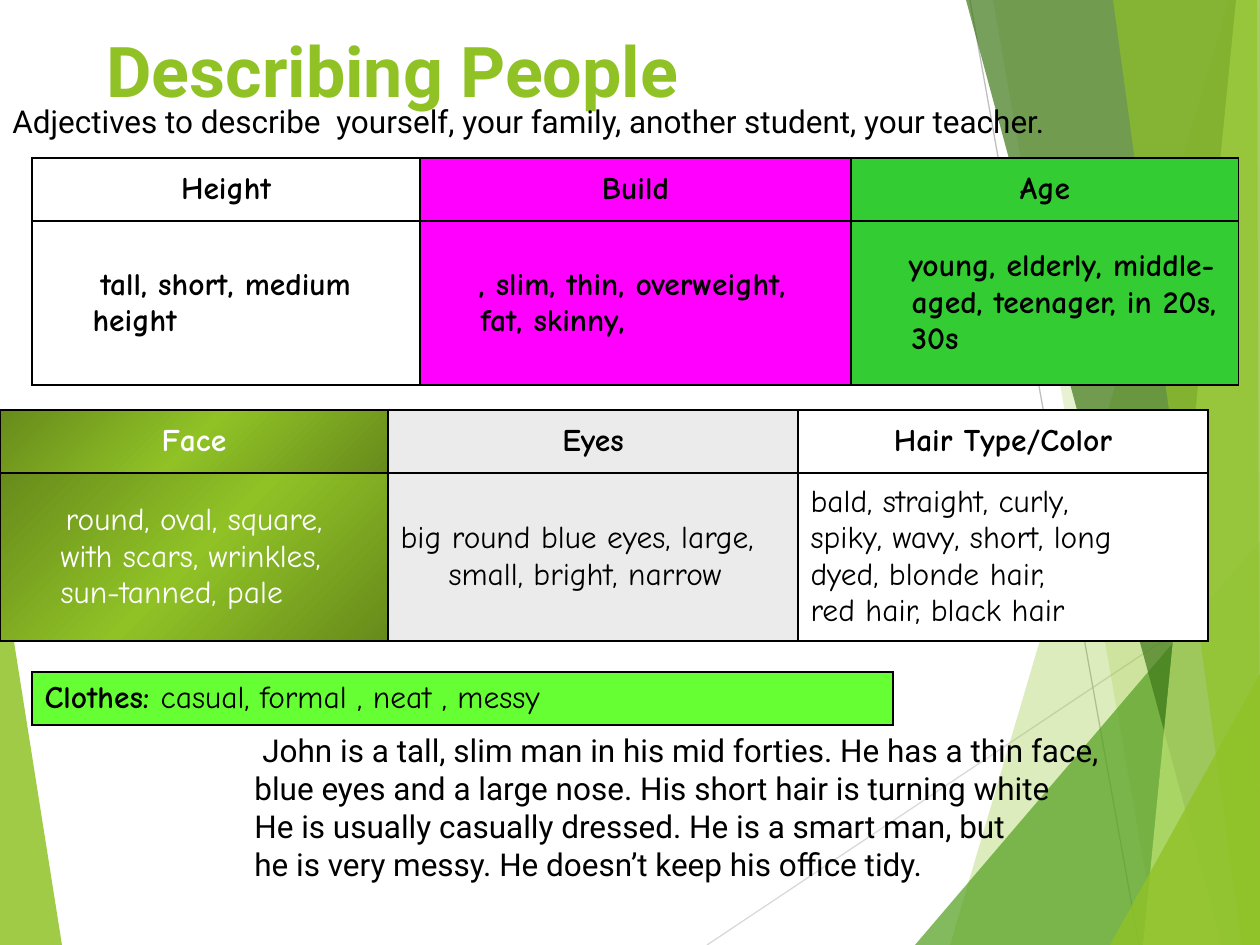
import pptx
import pptx.util
import pptx.dml.color
import pptx.enum.shapes
import pptx.enum.text
import pptx.oxml
import pptx.oxml.ns
import copy
import lxml.etree

SCALE = 914400 / 126
HAND, SANS = "Comic Neue", "Roboto"
NAMESPACE = pptx.oxml.ns.nsdecls("a")
CENTER = pptx.enum.text.PP_ALIGN.CENTER
MIDDLE = pptx.enum.text.MSO_ANCHOR.MIDDLE


def color(code):
    return pptx.dml.color.RGBColor.from_string(code)


def write(frame, text, font=SANS, size=18, ink="000000", bold=False, align=None, margin=0, indents=(0,)):
    for index, line in enumerate(text.split("\n")):
        paragraph = frame.paragraphs[0] if index == 0 else frame.add_paragraph()
        paragraph.alignment = align
        properties = paragraph._p.get_or_add_pPr()
        properties.set("marL", str(round(margin * SCALE)))
        properties.set("indent", str(round(indents[min(index, len(indents) - 1)] * SCALE)))
        run = paragraph.add_run()
        run.text = line
        run.font.name = font
        run.font.size = pptx.util.Pt(size)
        run.font.bold = bold
        run.font.color.rgb = color(ink)


presentation = pptx.Presentation()
presentation.slide_width = round(1260 * SCALE)
presentation.slide_height = round(945 * SCALE)
slide = presentation.slides.add_slide(presentation.slide_layouts[6])
shapes = slide.shapes

rays = [
    ("90C226", 85, [(0, 553), (62, 945), (0, 945)]),
    ("90C226", 30, [(1229, 0), (950, 945), (1260, 945), (1260, 0)]),
    ("90C226", 20, [(993, 0), (1158, 945), (1260, 945), (1260, 0)]),
    ("54A021", 72, [(915, 945), (1260, 541), (1260, 945)]),
    ("3F7819", 70, [(966, 0), (1222, 945), (1260, 945), (1260, 0)]),
    ("C0E474", 70, [(1236, 0), (1143, 945), (1260, 945), (1260, 0)]),
    ("90C226", 65, [(1113, 0), (1242, 945), (1260, 945), (1257, 0)]),
    ("90C226", 80, [(1110, 945), (1260, 674), (1260, 945)]),
]
threads = [("D9D9D9", (707, 945, 1260, 576)), ("BFBFBF", (970, 0, 1139, 945))]

for index, (fill, opacity, points) in enumerate(rays):
    builder = shapes.build_freeform(*points[0], scale=SCALE)
    builder.add_line_segments(points[1:], close=True)
    ray = builder.convert_to_shape()
    ray.shadow.inherit = False
    ray.line.fill.background()
    ray.fill.solid()
    ray.fill.fore_color.rgb = color(fill)
    tone = ray._element.spPr.find(".//" + pptx.oxml.ns.qn("a:srgbClr"))
    lxml.etree.SubElement(tone, pptx.oxml.ns.qn("a:alpha")).set("val", str(opacity * 1000))
    if index == 0:
        for stroke, ends in threads:
            thread = shapes.add_connector(
                pptx.enum.shapes.MSO_CONNECTOR.STRAIGHT, *[round(end * SCALE) for end in ends])
            thread.line.color.rgb = color(stroke)
            thread.line.width = pptx.util.Pt(0.75)
            lxml.etree.SubElement(thread._element.spPr, pptx.oxml.ns.qn("a:effectLst"))

story = (
    "John is a tall, slim man in his mid forties. He has a thin face,\n"
    "blue eyes and a large nose. His short hair is turning white\n"
    "He is usually casually dressed. He is a smart man, but\n"
    "he is very messy. He doesn’t keep his office tidy."
)
subtitle = "Adjectives to describe  yourself, your family, another student, your teacher."
texts = [
    ((94, 21, 946, 220), "Describing People", dict(size=40, ink="90C226", bold=True)),
    ((0, 76, 1075, 89), subtitle, {}),
    ((242, 725, 955, 164), story, dict(indents=(8, 0))),
]
for box, text, style in texts:
    textbox = shapes.add_textbox(*[round(length * SCALE) for length in box])
    textbox.text_frame.word_wrap = True
    if text == subtitle:
        textbox.text_frame.vertical_anchor = MIDDLE
    write(textbox.text_frame, text, **style)

WHITE, BLACK, GRADIENT = "FFFFFF", "000000", ("678B1B", "90C226", "678B1B")
heading = dict(bold=True, align=CENTER, margin=48, indents=(-48,))
body = dict(margin=48, indents=(-48,))
hair = "bald, straight, curly,\nspiky, wavy, short, long\ndyed, blonde hair,\nred hair, black hair"
tables = [
    (32, 158, (388, 431, 388), (63, 164), 0.75, (WHITE, "FF00FF", "33CC33"), [
        [("Height", heading), ("Build", heading), ("Age", heading)],
        [("tall, short, medium height", dict(bold=True, margin=48, indents=(8,))),
         (", slim, thin, overweight,  fat, skinny,", dict(bold=True, margin=48, indents=(-2,))),
         ("young, elderly, middle-aged, teenager, in 20s, 30s", dict(bold=True, margin=48, indents=(-3,)))],
    ]),
    (0, 410, (388, 410, 410), (63, 168), 0.75, (GRADIENT, "EBEBEB", WHITE), [
        [("Face", heading), ("Eyes", heading), ("Hair Type/Color", heading)],
        [("round, oval, square, with scars, wrinkles, sun-tanned, pale", dict(margin=48, indents=(5,))),
         ("big round blue eyes, large, small, bright, narrow", body),
         (hair, body)],
    ]),
    (32, 672, (861,), (53,), 1, ("66FF33",), [[("Clothes: ", dict(bold=True))]]),
]
for left, top, widths, heights, border, fills, rows in tables:
    box = (left, top, sum(widths), sum(heights))
    table = shapes.add_table(len(heights), len(widths), *[round(length * SCALE) for length in box]).table
    for column, width in zip(table.columns, widths):
        column.width = round(width * SCALE)
    for row, height in zip(table.rows, heights):
        row.height = round(height * SCALE)
    for row_index, entries in enumerate(rows):
        for column_index, ((text, style), fill) in enumerate(zip(entries, fills)):
            cell = table.cell(row_index, column_index)
            cell.vertical_anchor = MIDDLE
            ink = WHITE if fill == GRADIENT else BLACK
            write(cell.text_frame, text, font=HAND, ink=ink, **style)
            if fill == GRADIENT:
                cell.fill.gradient()
                cell.fill.gradient_angle = 315
                stop_list = cell._tc.find(".//" + pptx.oxml.ns.qn("a:gsLst"))
                stop_list.append(copy.deepcopy(stop_list[0]))
                for stop, shade, position in zip(cell.fill.gradient_stops, fill, (0, 0.5, 1)):
                    stop.color.rgb = color(shade)
                    stop.position = position
            else:
                cell.fill.solid()
                cell.fill.fore_color.rgb = color(fill)
            properties = cell._tc.get_or_add_tcPr()
            for position, side in enumerate(("lnL", "lnR", "lnT", "lnB")):
                properties.insert(position, pptx.oxml.parse_xml(
                    f'<a:{side} {NAMESPACE} w="{pptx.util.Pt(border)}"><a:solidFill>'
                    f'<a:srgbClr val="{BLACK}"/></a:solidFill></a:{side}>'))

write(table.cell(0, 0).text_frame, "casual, formal , neat , messy", font=HAND)

presentation.save("out.pptx")
